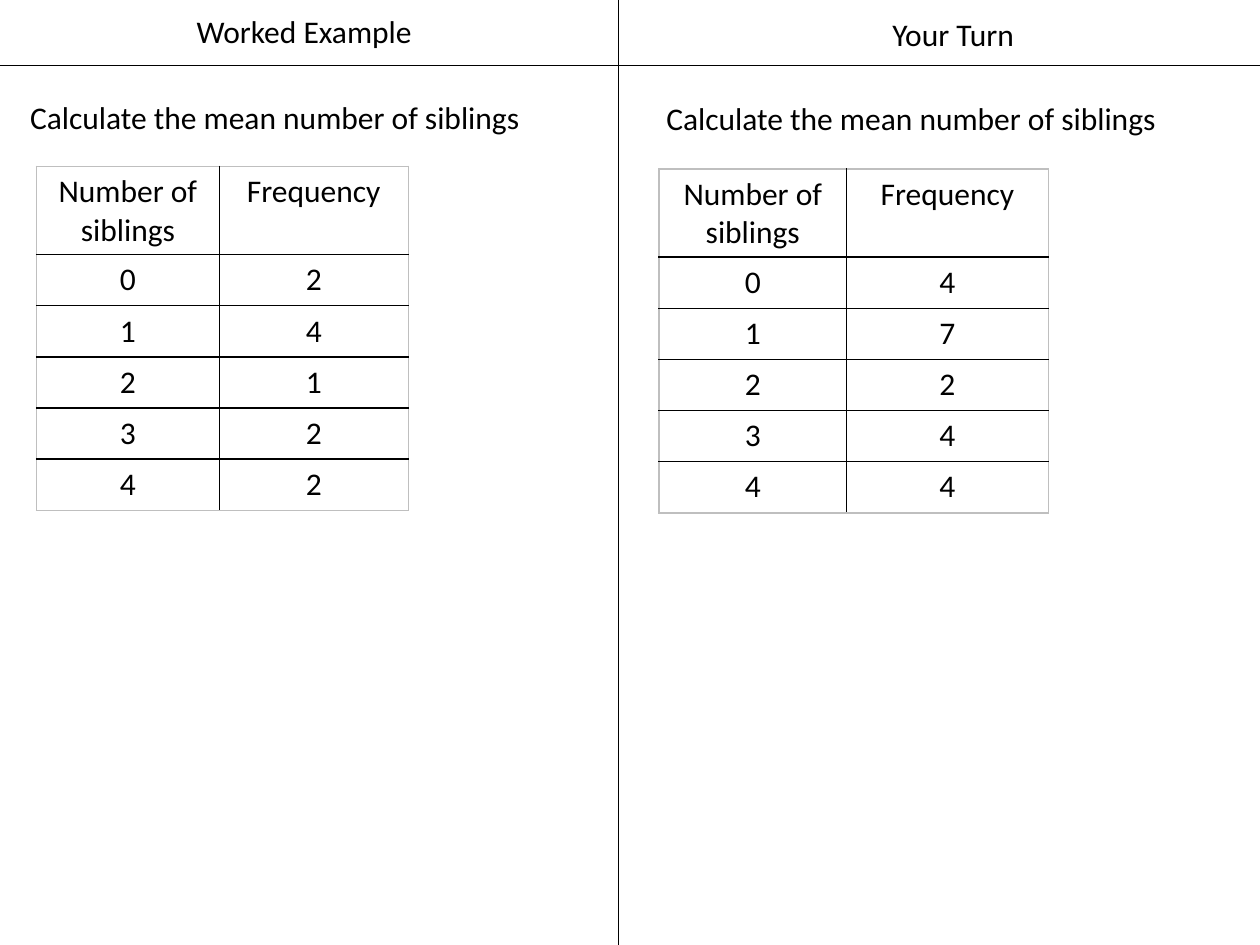
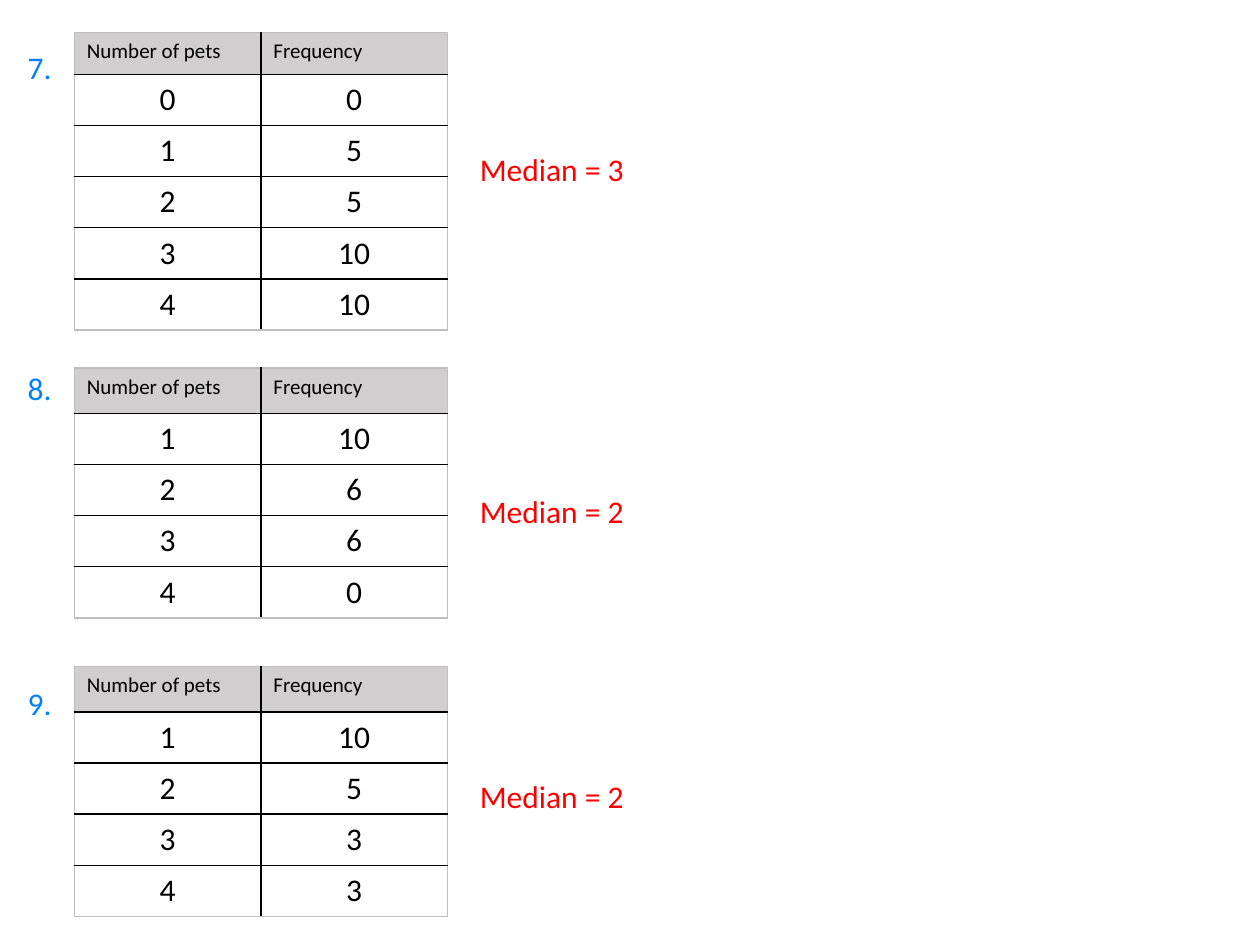
from lxml import etree
from pptx import Presentation
from pptx.dml.color import RGBColor
from pptx.enum import shapes, text
from pptx.oxml import ns
from pptx.util import Inches, Pt

FONT = "Calibri"
BLACK = RGBColor(0x00, 0x00, 0x00)
BLUE = RGBColor(0x00, 0x7F, 0xFF)
RED = RGBColor(0xFF, 0x00, 0x00)
HEADER_GREY = RGBColor(0xD0, 0xCE, 0xCE)
EDGE_GREY = RGBColor(0xBF, 0xBF, 0xBF)
ROW_HEIGHT = 0.406


def add_text(slide, wording, left, top, width, height=0.4, color=BLACK,
             align=text.PP_ALIGN.LEFT, wrap=True, inset=True):
    box = slide.shapes.add_textbox(Inches(left), Inches(top), Inches(width), Inches(height))
    frame = box.text_frame
    frame.word_wrap = wrap
    frame.auto_size = text.MSO_AUTO_SIZE.SHAPE_TO_FIT_TEXT
    if not inset:
        frame.margin_left = frame.margin_right = frame.margin_top = frame.margin_bottom = 0
    frame.text = wording
    paragraph = frame.paragraphs[0]
    paragraph.alignment = align
    font = paragraph.runs[0].font
    font.name, font.size, font.color.rgb = FONT, Pt(18), color


def add_frequency_table(slide, rows, left, top, widths, header_height, shaded):
    """Add a two-column table with black inner rules and a grey outer edge."""
    height = header_height + ROW_HEIGHT * (len(rows) - 1)
    frame = slide.shapes.add_table(len(rows), 2, Inches(left), Inches(top),
                                   Inches(sum(widths)), Inches(height))
    table = frame.table
    table.first_row = table.horz_banding = False
    for column, width in zip(table.columns, widths):
        column.width = Inches(width)
    last = len(rows) - 1
    for r, values in enumerate(rows):
        is_header = r == 0
        table.rows[r].height = Inches(header_height if is_header else ROW_HEIGHT)
        for c, value in enumerate(values):
            cell = table.cell(r, c)
            properties = cell._tc.get_or_add_tcPr()
            outer = {"lnL": c == 0, "lnR": c == 1, "lnT": r == 0, "lnB": r == last}
            for side, is_outer in outer.items():
                line = etree.SubElement(properties, ns.qn(f"a:{side}"), w=str(Pt(1)))
                fill = etree.SubElement(line, ns.qn("a:solidFill"))
                etree.SubElement(fill, ns.qn("a:srgbClr"),
                                 val=str(EDGE_GREY if is_outer else BLACK))
            small = is_header and shaded
            if small:
                cell.fill.solid()
                cell.fill.fore_color.rgb = HEADER_GREY
            else:
                cell.fill.background()
            cell.text_frame.text = str(value)
            paragraph = cell.text_frame.paragraphs[0]
            paragraph.alignment = text.PP_ALIGN.LEFT if small else text.PP_ALIGN.CENTER
            font = paragraph.runs[0].font
            font.name, font.size, font.color.rgb = FONT, Pt(12 if small else 18), BLACK


presentation = Presentation()
presentation.slide_width = Inches(10)
presentation.slide_height = Inches(7.5)
blank_layout = presentation.slide_layouts[6]

# Slide 1: worked example beside a practice question
slide = presentation.slides.add_slide(blank_layout)
for x1, y1, x2, y2 in [(0, 0.52, 10, 0.52), (4.91, 0, 4.91, 7.5)]:
    divider = slide.shapes.add_connector(shapes.MSO_CONNECTOR.STRAIGHT, Inches(x1),
                                         Inches(y1), Inches(x2), Inches(y2))
    divider.line.color.rgb = BLACK
    divider.line.width = Pt(0.5)
    etree.SubElement(divider._element.spPr, ns.qn("a:effectLst"))

# Heading, its place, question place, table place, column widths, frequencies
halves = [
    ("Worked Example", (0.8, 0.05), (0.14, 0.73), (0.29, 1.32), (1.45, 1.5), [2, 4, 1, 2, 2]),
    ("Your Turn", (5.95, 0.07), (5.19, 0.74), (5.23, 1.34), (1.49, 1.6), [4, 7, 2, 4, 4]),
]
for heading, heading_at, question_at, table_at, widths, frequencies in halves:
    add_text(slide, heading, *heading_at, 3.23, align=text.PP_ALIGN.CENTER)
    add_text(slide, "Calculate the mean number of siblings", *question_at, 4.6)
    rows = [("Number of siblings", "Frequency"), *enumerate(frequencies)]
    add_frequency_table(slide, rows, *table_at, widths, 0.7, shaded=False)

# Slide 2: median answers
slide = presentation.slides.add_slide(blank_layout)
# Number top, table top, header height, first value, frequencies, answer, answer top
questions = [
    (0.38, 0.26, 0.33, 0, [0, 5, 5, 10, 10], 3, 1.14),
    (2.93, 2.92, 0.36, 1, [10, 6, 6, 0], 2, 3.86),
    (5.43, 5.29, 0.36, 1, [10, 5, 3, 3], 2, 6.12),
]
for number, question in enumerate(questions, start=7):
    number_top, table_top, header_height, first, frequencies, median, median_top = question
    rows = [("Number of pets", "Frequency"), *enumerate(frequencies, start=first)]
    add_frequency_table(slide, rows, 0.59, table_top, (1.48, 1.48), header_height, shaded=True)
    add_text(slide, f"{number}.", 0.22, number_top, 0.19, 0.3, BLUE, wrap=False, inset=False)
    add_text(slide, f"Median = {median}", 3.71, median_top, 1.36, color=RED, wrap=False)

presentation.save("out.pptx")
